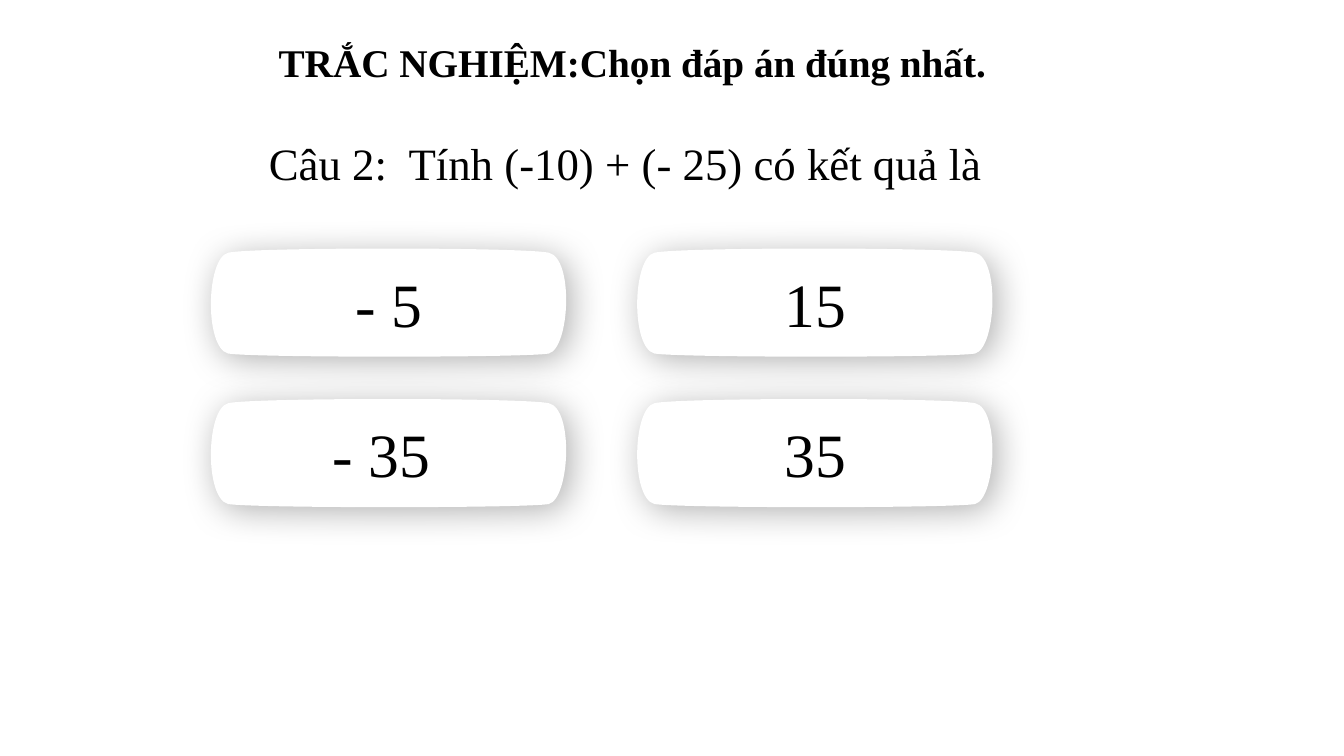
from pptx import Presentation
from pptx.dml.color import RGBColor
from pptx.enum.text import MSO_ANCHOR, MSO_AUTO_SIZE, PP_ALIGN
from pptx.oxml import parse_xml
from pptx.oxml.ns import nsdecls, qn
from pptx.util import Pt

COLORS = {"text": "000000", "card": "FFFFFF", "shadow": "000000"}
FONT = "Times New Roman"

# Start point, then three Bezier points for each of the four sides
CARD_CURVE = [
    (246, 4),
    (264, 8), (261, 72), (246, 75.5),
    (231, 79), (34, 79), (17, 75.5),
    (0, 72), (1, 8), (17, 4),
    (33, 0), (228, 0), (246, 4),
]
CARD_LEFT, CARD_TOP = 146, 176.5
COLUMN_STEP, ROW_STEP = 304.5, 107.5
ANSWERS = [["- 5", "15"], ["- 35 ", "35"]]


def write_text(tf, text, size, bold=False, align=PP_ALIGN.LEFT):
    p = tf.paragraphs[0]
    p.alignment = align
    r = p.add_run()
    r.text = text
    r.font.name = FONT
    r.font.size = Pt(size)
    r.font.bold = bold
    r.font.color.rgb = RGBColor.from_string(COLORS["text"])


def add_text(s, text, left, top, width, height, **fmt):
    tf = s.shapes.add_textbox(Pt(left), Pt(top), Pt(width), Pt(height)).text_frame
    tf.word_wrap = True
    tf.auto_size = MSO_AUTO_SIZE.SHAPE_TO_FIT_TEXT
    write_text(tf, text, **fmt)


def curve_sides(sp):
    """Turn each three line segments of a freeform into one Bezier curve."""
    path = next(sp._element.iter(qn("a:path")))
    lines = path.findall(qn("a:lnTo"))
    for i in range(0, len(lines), 3):
        curve = parse_xml(f"<a:cubicBezTo {nsdecls('a')}/>")
        lines[i].addprevious(curve)
        for line in lines[i:i + 3]:
            curve.append(line[0])
            path.remove(line)


def add_soft_shadow(sp):
    sp.shadow.inherit = False
    effects = sp._element.spPr.find(qn("a:effectLst"))
    effects.append(parse_xml(
        f'<a:outerShdw {nsdecls("a")} blurRad="{Pt(25)}" dist="{Pt(5)}" '
        'dir="2700000" algn="tl" rotWithShape="0">'
        f'<a:srgbClr val="{COLORS["shadow"]}"><a:alpha val="30000"/></a:srgbClr>'
        '</a:outerShdw>'))


def add_answer_card(s, text, left, top):
    start, *points = CARD_CURVE
    builder = s.shapes.build_freeform(*start, scale=Pt(1))
    builder.add_line_segments(points, close=True)
    sp = builder.convert_to_shape(Pt(left), Pt(top))
    curve_sides(sp)
    sp.fill.solid()
    sp.fill.fore_color.rgb = RGBColor.from_string(COLORS["card"])
    sp.line.fill.background()
    add_soft_shadow(sp)
    tf = sp.text_frame
    tf.word_wrap = True
    tf.vertical_anchor = MSO_ANCHOR.MIDDLE
    write_text(tf, text, size=44, align=PP_ALIGN.CENTER)


def main():
    prs = Presentation()
    prs.slide_width, prs.slide_height = Pt(960), Pt(540)
    s = prs.slides.add_slide(prs.slide_layouts[6])
    add_text(s, "TRẮC NGHIỆM:Chọn đáp án đúng nhất.", 192, 24, 523, 41,
             size=28, bold=True)
    add_text(s, "Câu 2:  Tính (-10) + (- 25) có kết quả là", 185, 93.5, 858, 46,
             size=32)
    for row, answers in enumerate(ANSWERS):
        for column, answer in enumerate(answers):
            add_answer_card(s, answer, CARD_LEFT + column * COLUMN_STEP,
                            CARD_TOP + row * ROW_STEP)
    prs.save("out.pptx")


if __name__ == "__main__":
    main()
